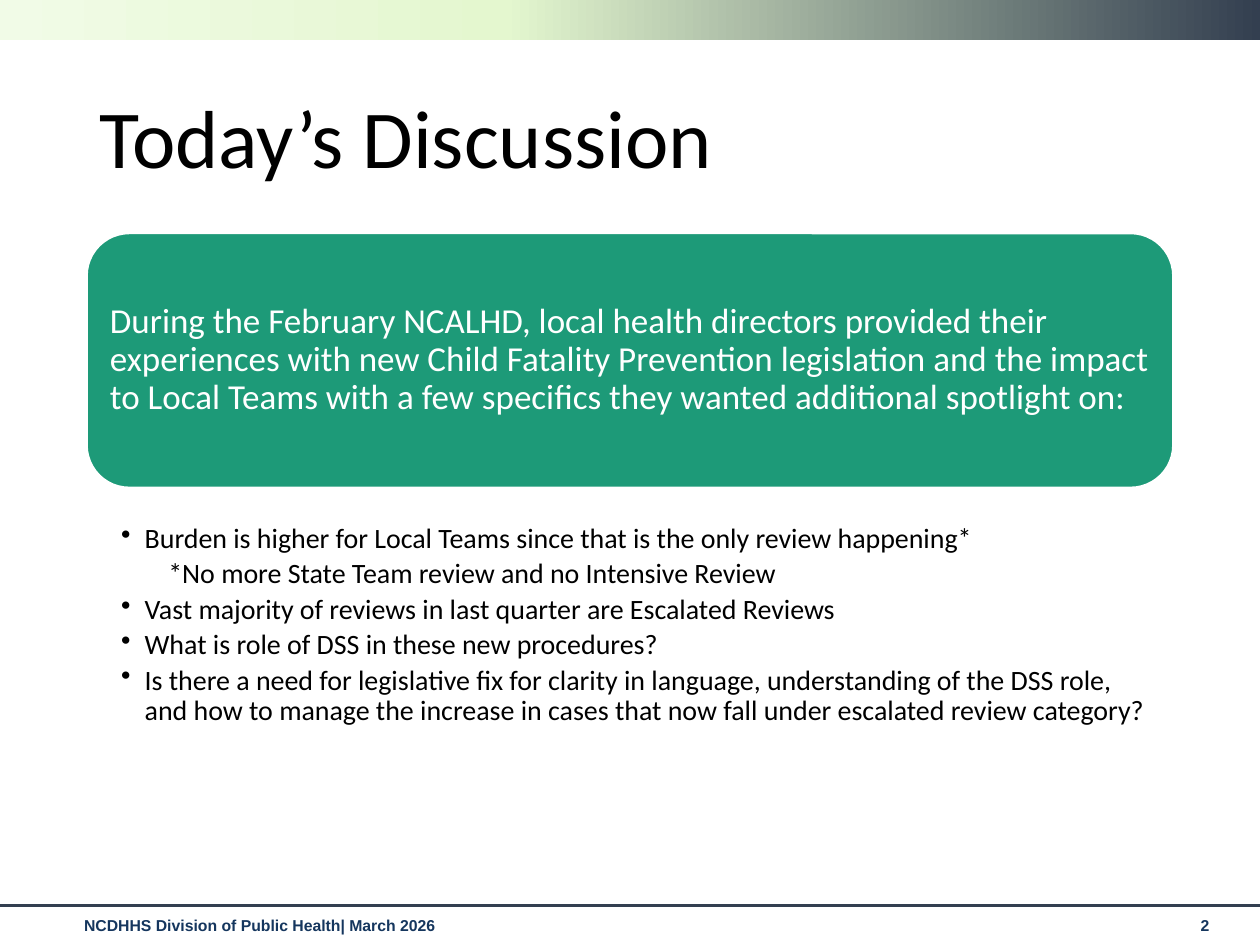
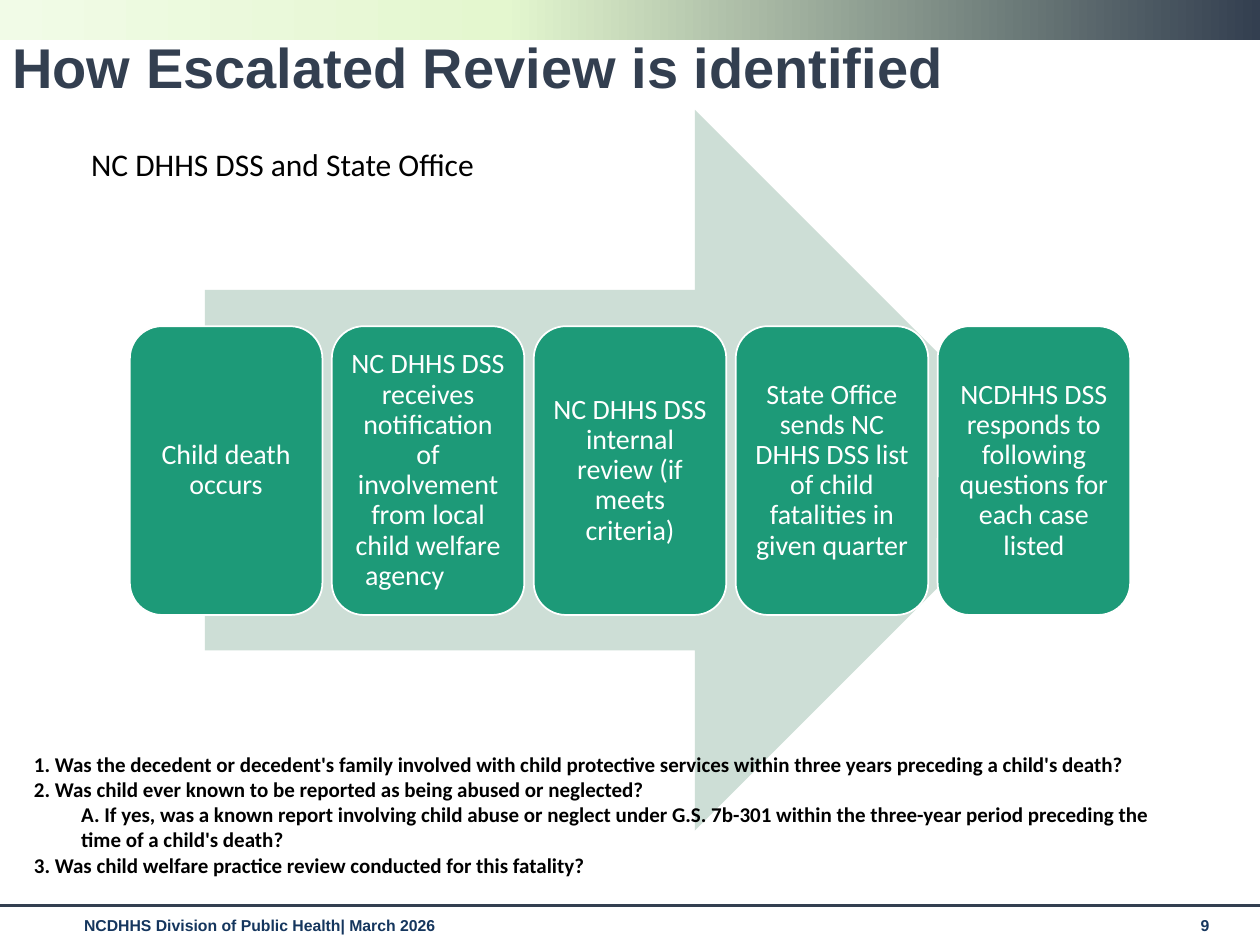
"""Build two slides on child fatality reviews: discussion topics and the escalated review flow."""
from copy import deepcopy
from dataclasses import dataclass

from lxml.etree import SubElement
from pptx import Presentation
from pptx.dml.color import RGBColor
from pptx.enum.shapes import MSO_CONNECTOR, MSO_SHAPE
from pptx.enum.text import MSO_ANCHOR, PP_ALIGN
from pptx.oxml.ns import qn
from pptx.util import Pt

FOOTER = "NCDHHS Division of Public Health| March 2026"

DISCUSSION = {
    "page": "2",
    "title": "Today’s Discussion",
    "lead": "During the February NCALHD, local health directors provided their experiences with new "
            "Child Fatality Prevention legislation and the impact to Local Teams with a few "
            "specifics they wanted additional spotlight on:",
    "topics": [
        (1, "Burden is higher for Local Teams since that is the only review happening*"),
        (2, "*No more State Team review and no Intensive Review"),
        (1, "Vast majority of reviews in last quarter are Escalated Reviews"),
        (1, "What is role of DSS in these new procedures?"),
        (1, "Is there a need for legislative fix for clarity in language, understanding of the DSS "
            "role, and how to manage the increase in cases that now fall under escalated review "
            "category?"),
    ],
}

ESCALATION = {
    "page": "9",
    "title": "How Escalated Review is identified",
    "offices": "NC DHHS DSS and State Office",
    "steps": [
        "Child death occurs",
        "NC DHHS DSS receives notification of involvement from local child welfare agency\t",
        "NC DHHS DSS internal review (if meets criteria)",
        "State Office sends NC DHHS DSS list of child fatalities in given quarter",
        "NCDHHS DSS responds to following questions for each case listed",
    ],
    "questions": [
        (1, "1. Was the decedent or decedent's family involved with child protective services "
            "within three years preceding a child's death?"),
        (1, "2. Was child ever known to be reported as being abused or neglected?"),
        (2, "A. If yes, was a known report involving child abuse or neglect under G.S. 7b-301 "
            "within the three-year period preceding the time of a child's death?"),
        (1, "3. Was child welfare practice review conducted for this fatality?"),
    ],
}


@dataclass(frozen=True)
class Style:
    size: float
    color: str
    font: str = "Calibri"
    bold: bool = False


@dataclass(frozen=True)
class Theme:
    green: str = "1D9A78"
    pale_green: str = "CDDED6"
    slate: str = "333F50"
    white: str = "FFFFFF"
    band: tuple = ((0, "F1FBE7"), (40, "E4F7CF"), (100, "333F50"))
    footer: Style = Style(9, "15365E", "Arial", True)
    big_title: Style = Style(47, "000000")
    bold_title: Style = Style(32, "333F50", "Arial", True)
    lead: Style = Style(20, "FFFFFF")
    step: Style = Style(16, "FFFFFF")
    topic: Style = Style(16, "000000")
    offices: Style = Style(18, "000000")
    question: Style = Style(12, "000000", bold=True)
    tight: float = 0.9


THEME = Theme()
WIDTH, HEIGHT = 720, 540
MARGIN, BODY_WIDTH = 49.7, 620.6
BAND_HEIGHT = 23
RULE_TOP = 517.6
FOOTER_TOP = 519.8
HANG = 13.5
STEP_WIDTH, STEP_HEIGHT, STEP_GAP, STEP_TOP = 110, 165, 5.4, 186.4


def rgb(color):
    return RGBColor.from_string(color)


def write(paragraph, text, style, spacing=None, align=None):
    paragraph.line_spacing = spacing
    paragraph.alignment = align
    run = paragraph.add_run()
    run.text = text
    run.font.name = style.font
    run.font.size = Pt(style.size)
    run.font.bold = style.bold
    run.font.color.rgb = rgb(style.color)


def indent(paragraph, left, first=0, bullet=None):
    properties = paragraph._p.get_or_add_pPr()
    properties.set("marL", str(Pt(left)))
    properties.set("indent", str(Pt(first)))
    if bullet:
        SubElement(properties, qn("a:buChar"), char=bullet)


def add_frame(slide, box, anchor=MSO_ANCHOR.TOP):
    frame = slide.shapes.add_textbox(*map(Pt, box)).text_frame
    frame.word_wrap = True
    frame.vertical_anchor = anchor
    return frame


def add_line_of_text(slide, box, text, style, spacing=None, anchor=MSO_ANCHOR.TOP):
    write(add_frame(slide, box, anchor).paragraphs[0], text, style, spacing)


def paragraphs_for(frame, items):
    for index, (level, text) in enumerate(items):
        paragraph = frame.add_paragraph() if index else frame.paragraphs[0]
        yield paragraph, level, text


def add_panel(slide, kind, box, fill, outline=None):
    panel = slide.shapes.add_shape(kind, *map(Pt, box))
    panel.shadow.inherit = False
    panel.fill.solid()
    panel.fill.fore_color.rgb = rgb(fill)
    if outline:
        panel.line.color.rgb = rgb(outline)
        panel.line.width = Pt(1)
    else:
        panel.line.fill.background()
    return panel


def add_card(slide, box, text, style, inset, align):
    card = add_panel(slide, MSO_SHAPE.ROUNDED_RECTANGLE, box, THEME.green, THEME.white)
    frame = card.text_frame
    frame.word_wrap = True
    frame.vertical_anchor = MSO_ANCHOR.MIDDLE
    frame.margin_left = frame.margin_right = Pt(inset)
    frame.margin_top = frame.margin_bottom = Pt(inset)
    write(frame.paragraphs[0], text, style, THEME.tight, align)


def add_band(slide):
    band = add_panel(slide, MSO_SHAPE.RECTANGLE, (0, 0, WIDTH, BAND_HEIGHT), THEME.white)
    band.fill.gradient()
    band.fill.gradient_angle = 0
    stops = band.fill._fill._gradFill.gsLst
    stops.append(deepcopy(stops[-1]))
    for stop, (position, color) in zip(band.fill.gradient_stops, THEME.band):
        stop.position = position / 100
        stop.color.rgb = rgb(color)


def add_base_slide(deck, page):
    slide = deck.slides.add_slide(deck.slide_layouts[6])
    add_line_of_text(slide, (41, FOOTER_TOP, 629, 21), FOOTER, THEME.footer)
    add_line_of_text(slide, (679, FOOTER_TOP, 32, 21), page, THEME.footer)
    add_band(slide)
    rule = slide.shapes.add_connector(
        MSO_CONNECTOR.STRAIGHT, Pt(0), Pt(RULE_TOP), Pt(WIDTH), Pt(RULE_TOP))
    rule.line.color.rgb = rgb(THEME.slate)
    rule.line.width = Pt(1.75)
    SubElement(rule._element.spPr, qn("a:effectLst"))
    return slide


def build_discussion(deck, content):
    slide = add_base_slide(deck, content["page"])
    add_line_of_text(slide, (MARGIN, 28.8, BODY_WIDTH, 104.4), content["title"],
                     THEME.big_title, THEME.tight, MSO_ANCHOR.MIDDLE)
    add_card(slide, (MARGIN, 133.4, BODY_WIDTH, 145.2), content["lead"],
             THEME.lead, 6, PP_ALIGN.LEFT)
    frame = add_frame(slide, (MARGIN, 298, BODY_WIDTH, 196))
    frame.margin_left, frame.margin_right = Pt(19.5), Pt(8)
    frame.margin_top = frame.margin_bottom = Pt(1.5)
    for paragraph, level, text in paragraphs_for(frame, content["topics"]):
        if level == 1:
            indent(paragraph, HANG, -HANG, "•")
        else:
            indent(paragraph, 2 * HANG)
        paragraph.space_after = Pt(3)
        write(paragraph, text, THEME.topic, THEME.tight)


def build_escalation(deck, content):
    slide = add_base_slide(deck, content["page"])
    add_line_of_text(slide, (0, 19.5, 618, 43), content["title"], THEME.bold_title, THEME.tight)
    add_panel(slide, MSO_SHAPE.RIGHT_ARROW, (117, 62.8, 486, 411.8), THEME.pale_green)
    steps = content["steps"]
    pitch = STEP_WIDTH + STEP_GAP
    first_left = (WIDTH - len(steps) * pitch + STEP_GAP) / 2
    for index, step in enumerate(steps):
        box = (first_left + index * pitch, STEP_TOP, STEP_WIDTH, STEP_HEIGHT)
        add_card(slide, box, step, THEME.step, 4.8, PP_ALIGN.CENTER)
    frame = add_frame(slide, (12.3, 425.8, 658, 94))
    for paragraph, level, text in paragraphs_for(frame, content["questions"]):
        indent(paragraph, 27 * (level - 1))
        write(paragraph, text, THEME.question)
    add_line_of_text(slide, (45, 79.2, 269, 29), content["offices"], THEME.offices)


def main():
    deck = Presentation()
    deck.slide_width, deck.slide_height = Pt(WIDTH), Pt(HEIGHT)
    build_discussion(deck, DISCUSSION)
    build_escalation(deck, ESCALATION)
    deck.save("out.pptx")


if __name__ == "__main__":
    main()
